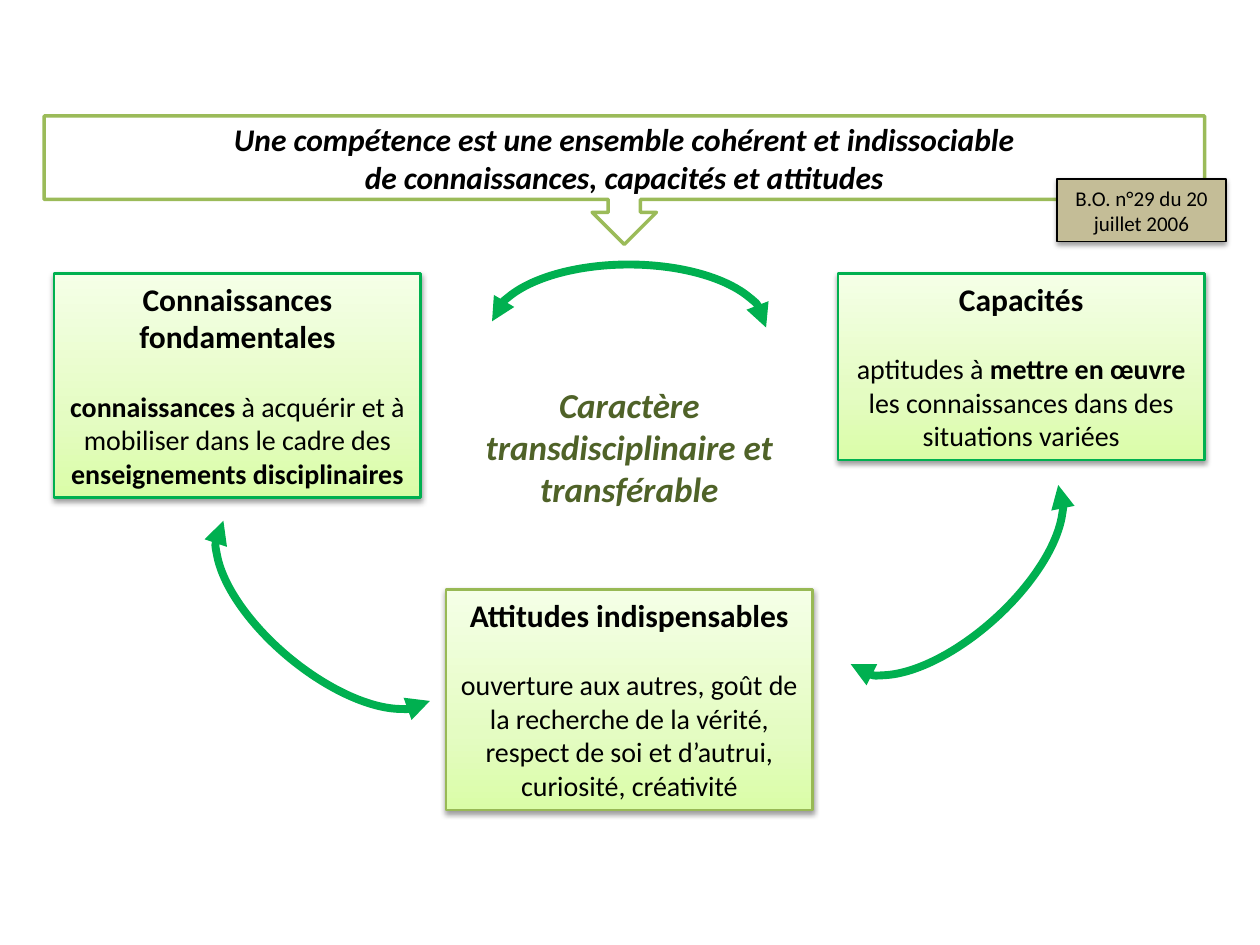
import pptx
import pptx.util
import pptx.oxml
import pptx.oxml.ns
import pptx.dml.color
import pptx.enum.shapes
import pptx.enum.text

Inches, Pt = pptx.util.Inches, pptx.util.Pt
RGBColor = pptx.dml.color.RGBColor
SHAPE = pptx.enum.shapes.MSO_SHAPE
ANCHOR = pptx.enum.text.MSO_ANCHOR
GROW = pptx.enum.text.MSO_AUTO_SIZE.SHAPE_TO_FIT_TEXT
DRAWING_NS = pptx.oxml.ns.nsdecls("a")

BLACK = RGBColor(0x00, 0x00, 0x00)
WHITE = RGBColor(0xFF, 0xFF, 0xFF)
GREEN = RGBColor(0x00, 0xB0, 0x50)
OLIVE = RGBColor(0x9B, 0xBB, 0x59)
SOFT_OLIVE = RGBColor(0x98, 0xB9, 0x55)
DARK_OLIVE = RGBColor(0x4F, 0x62, 0x28)
TAN = RGBColor(0xC4, 0xBD, 0x97)
GRADIENT = [(0, RGBColor(0xDA, 0xFD, 0xA7)),
            (35, RGBColor(0xE4, 0xFC, 0xC2)),
            (100, RGBColor(0xF5, 0xFF, 0xE7))]

presentation = pptx.Presentation()
presentation.slide_width = Inches(10)
presentation.slide_height = Inches(7.5)
slide = presentation.slides.add_slide(presentation.slide_layouts[6])


def add_box(kind, box, line_color, line_width, fill=None, shadow=False):
    """Add a shape; without a fill colour it stays hollow."""
    shape = slide.shapes.add_shape(kind, *map(Inches, box))
    shape.line.color.rgb = line_color
    shape.line.width = Pt(line_width)
    if fill is None:
        shape.fill.background()
    else:
        shape.fill.solid()
        shape.fill.fore_color.rgb = fill
    shape.shadow.inherit = False
    if shadow:
        effects = shape.element.spPr.find(pptx.oxml.ns.qn("a:effectLst"))
        effects.append(pptx.oxml.parse_xml(
            f'<a:outerShdw {DRAWING_NS} blurRad="{Pt(3.1)}" dist="{Pt(1.6)}" '
            'dir="5400000" rotWithShape="0"><a:srgbClr val="000000">'
            '<a:alpha val="38000"/></a:srgbClr></a:outerShdw>'))
    return shape


def write(paragraph, pieces, size, color=BLACK, italic=False):
    """Fill a centred paragraph with (text, bold) pieces."""
    paragraph.alignment = pptx.enum.text.PP_ALIGN.CENTER
    for text, bold in pieces:
        # A line feed in a piece becomes a line break.
        for number, line in enumerate(text.split("\n")):
            if number:
                paragraph.add_line_break()
            run = paragraph.add_run()
            run.text = line
            run.font.name = "Calibri"
            run.font.size = Pt(size)
            run.font.bold = bold
            run.font.italic = italic
            run.font.color.rgb = color


definition = add_box(SHAPE.DOWN_ARROW_CALLOUT, (0.35, 0.92, 9.21, 1.02), OLIVE, 2, WHITE)
write(definition.text_frame.paragraphs[0],
      [("Une compétence est une ensemble cohérent et indissociable\n"
        "de connaissances, capacités et attitudes", True)], 18, italic=True)

components = [
    ((0.43, 2.17, 2.91, 1.78), GREEN, "Connaissances fondamentales",
     [("connaissances", True),
      (" à acquérir et à mobiliser dans le cadre des ", False),
      ("enseignements disciplinaires", True)]),
    ((6.65, 2.17, 2.91, 1.48), GREEN, "Capacités",
     [("aptitudes à ", False), ("mettre en œuvre", True),
      (" les connaissances dans des situations variées", False)]),
    ((3.54, 4.68, 2.91, 1.75), SOFT_OLIVE, "Attitudes indispensables",
     [("ouverture aux autres, goût de la recherche de la vérité, "
       "respect de soi et d’autrui, curiosité, créativité", False)]),
]
for box, line_color, title, description in components:
    component = add_box(SHAPE.RECTANGLE, box, line_color, 1.5, shadow=True)
    stops = "".join(f'<a:gs pos="{percent * 1000}"><a:srgbClr val="{color}"/></a:gs>'
                    for percent, color in GRADIENT)
    properties = component.element.spPr
    hollow = properties.find(pptx.oxml.ns.qn("a:noFill"))
    properties.replace(hollow, pptx.oxml.parse_xml(
        f'<a:gradFill {DRAWING_NS} rotWithShape="1"><a:gsLst>{stops}</a:gsLst>'
        '<a:lin ang="16200000" scaled="0"/></a:gradFill>'))
    frame = component.text_frame
    frame.vertical_anchor = ANCHOR.TOP
    frame.auto_size = GROW
    write(frame.paragraphs[0], [(title, True)], 18)
    body = frame.add_paragraph()
    body.space_before = Pt(19.5)
    write(body, description, 16)

reference = add_box(SHAPE.RECTANGLE, (8.39, 1.42, 1.34, 0.5), BLACK, 0.75, TAN, shadow=True)
reference.text_frame.vertical_anchor = ANCHOR.TOP
reference.text_frame.auto_size = GROW
write(reference.text_frame.paragraphs[0], [("B.O. n°29 du 20 juillet 2006", False)], 12)

for left, top, rotation in [(3.9, 2.1, 0), (6.47, 4.04, 137.9), (1.52, 4.33, 219.8)]:
    link = add_box(SHAPE.ARC, (left, top, 2.18, 1), GREEN, 4.5)
    link.rotation = rotation
    link.adjustments[0] = 109.56
    link.adjustments[1] = 0
    for end in ("headEnd", "tailEnd"):
        link.line._get_or_add_ln().append(
            pptx.oxml.parse_xml(f'<a:{end} {DRAWING_NS} type="triangle"/>'))

center = add_box(SHAPE.ROUNDED_RECTANGLE, (3.5, 2.76, 2.99, 1.57), WHITE, 2, WHITE)
write(center.text_frame.paragraphs[0],
      [("Caractère transdisciplinaire et transférable", True)], 20, DARK_OLIVE, italic=True)

presentation.save("out.pptx")
